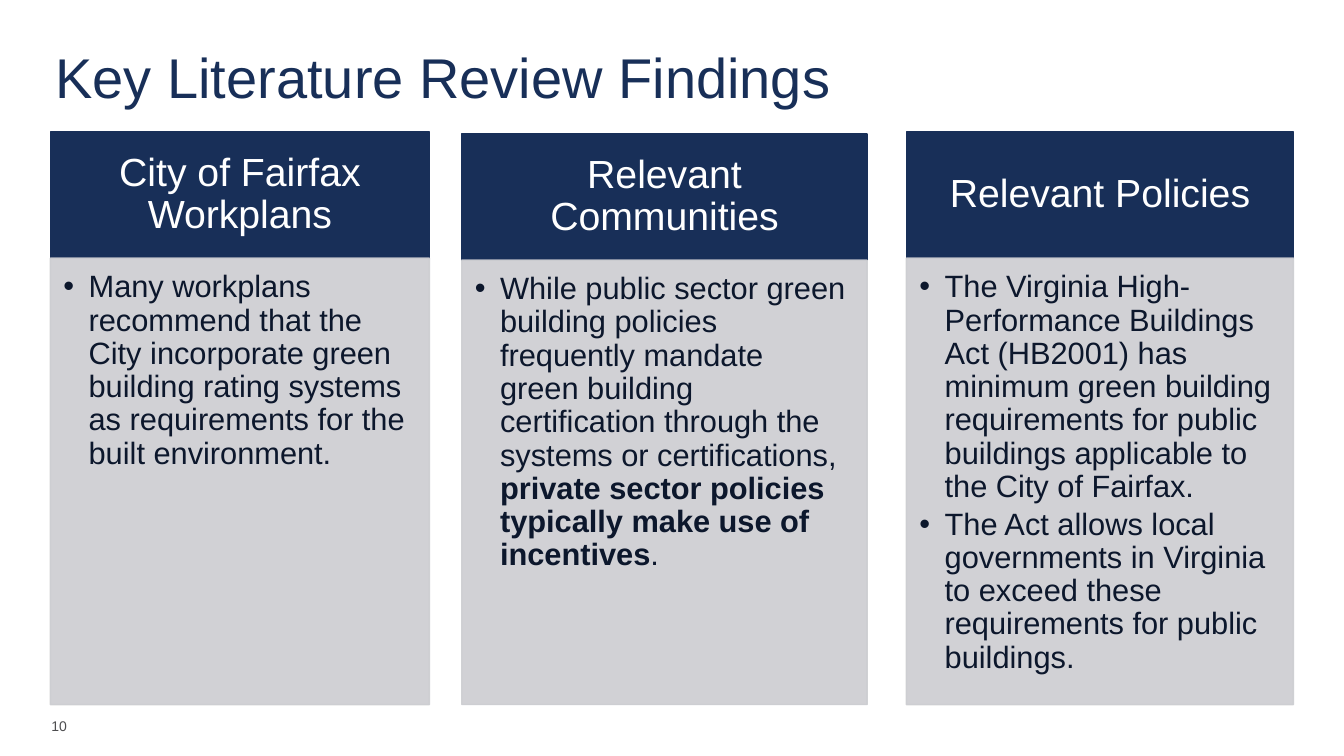
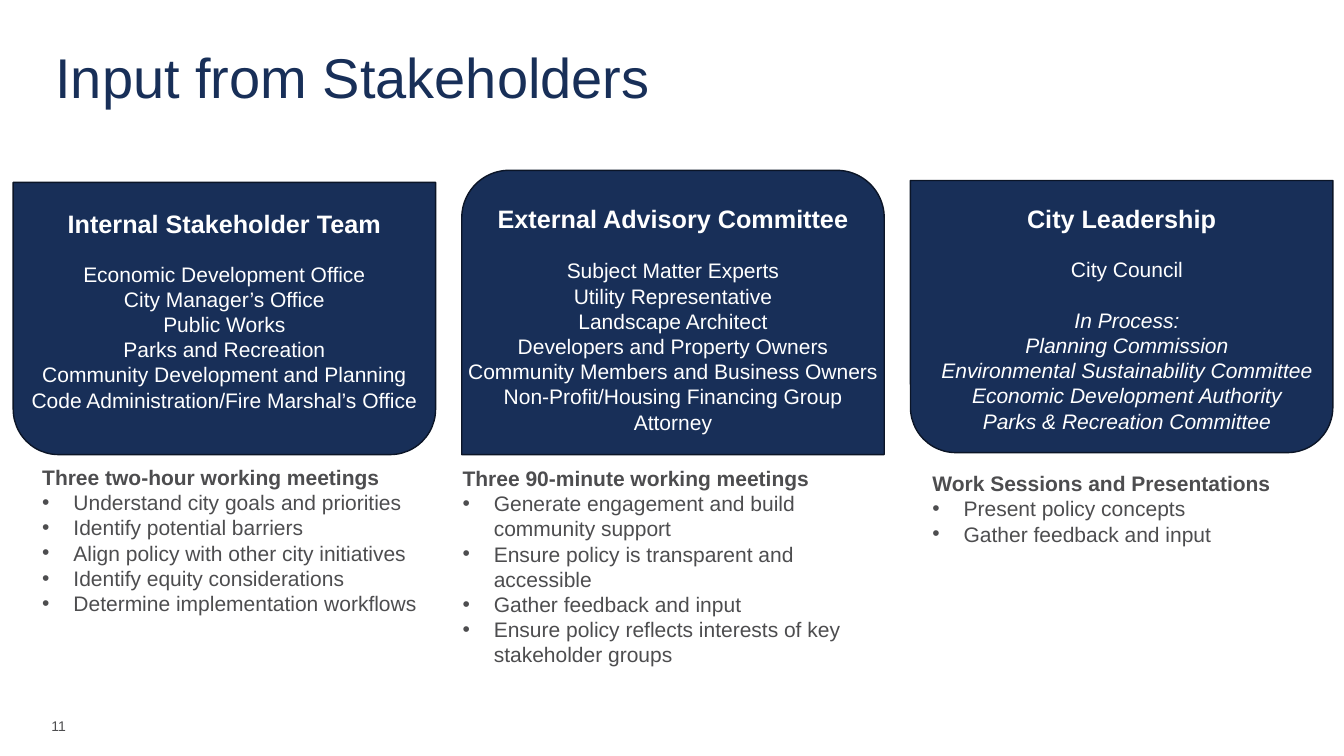
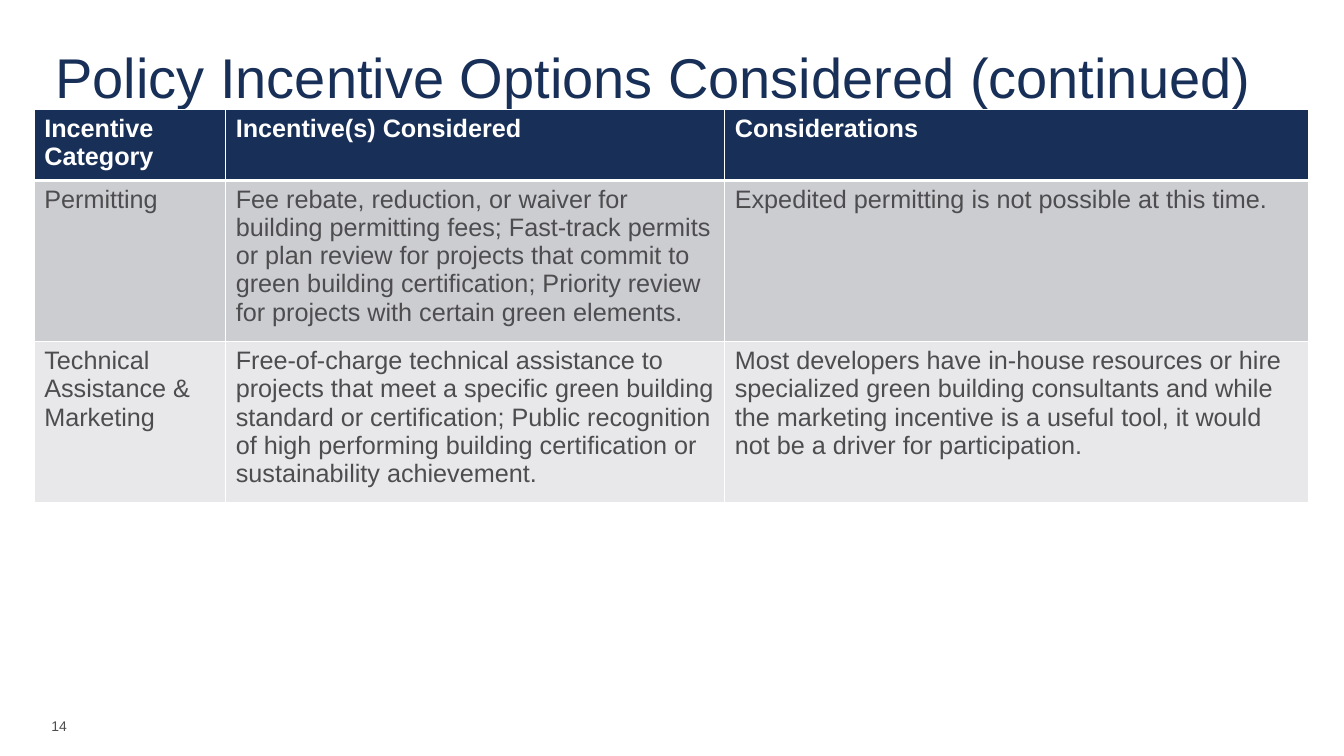
from dataclasses import dataclass
from typing import NamedTuple

from lxml.etree import SubElement
from pptx import Presentation
from pptx.dml.color import RGBColor
from pptx.enum.shapes import MSO_SHAPE as Shape
from pptx.enum.text import MSO_ANCHOR as Anchor, PP_ALIGN as Align
from pptx.oxml.ns import qn
from pptx.util import Emu, Inches, Pt

FONT = "Arial"
NAVY, OUTLINE, INK = "182F58", "0B1527", "0C172C"
GREY, SILVER, PALE, WHITE = "4D4D4F", "CCCDD1", "E8E8EA", "FFFFFF"
WIDTH, HEIGHT = Inches(13.33), Inches(7.5)


class Box(NamedTuple):
    """Left, top, width and height in percent of the slide."""
    left: float
    top: float
    width: float
    height: float


@dataclass
class Para:
    """Text in which ** switches bold on and off."""
    text: str
    italic: bool = False
    indent: float = 0
    before: float = 0


@dataclass
class Finding:
    left: float
    top: float
    width: float
    heading: str
    points: list[str]


@dataclass
class Group:
    """One stakeholder card and the notes under it."""
    top: float
    bottom: float
    heading: str
    heading_top: float
    members: list[Para]
    members_top: float
    meetings: str
    goals: list[str]
    notes: Box
    flipped: bool = True
    shift: float = 0


TITLE = Box(3.75, 4, 92.5, 10.53)
NUMBER = Box(3.08, 93.33, 30, 5.33)
HEADER_HEIGHT, BODY_BOTTOM = 16.67, 93.2
CARD_LEFT, CARD_PITCH, CARD_WIDTH = 0.98, 33.38, 31.43

FINDINGS = [
    Finding(3.75, 17.47, 28.2, "City of Fairfax Workplans", [
        "Many workplans recommend that the City incorporate green building rating "
        "systems as requirements for the built environment."]),
    Finding(34.36, 17.73, 30.16, "Relevant Communities", [
        "While public sector green building policies frequently mandate green building "
        "certification through the systems or certifications, **private sector policies "
        "typically make use of incentives**."]),
    Finding(67.44, 17.47, 28.8, "Relevant Policies", [
        "The Virginia High-Performance Buildings Act (HB2001) has minimum green building "
        "requirements for public buildings applicable to the City of Fairfax.",
        "The Act allows local governments in Virginia to exceed these requirements for "
        "public buildings."]),
]

GROUPS = [
    Group(24.13, 60.13, "Internal Stakeholder Team", 26.93, [
        Para("Economic Development Office"),
        Para("City Manager’s Office"),
        Para("Public Works"),
        Para("Parks and Recreation"),
        Para("Community Development and Planning"),
        Para("Code Administration/Fire Marshal’s Office")], 33.87,
        "Three two-hour working meetings", [
        "Understand city goals and priorities",
        "Identify potential barriers",
        "Align policy with other city initiatives",
        "Identify equity considerations",
        "Determine implementation workflows"], Box(2.4, 60.8, 30.53, 21.6)),
    Group(22.53, 60.13, "External Advisory Committee", 26.27, [
        Para("Subject Matter Experts"),
        Para("Utility Representative"),
        Para("Landscape Architect"),
        Para("Developers and Property Owners"),
        Para("Community Members and Business Owners"),
        Para("Non-Profit/Housing Financing Group"),
        Para("Attorney")], 33.47,
        "Three 90-minute working meetings", [
        "Generate engagement and build community support",
        "Ensure policy is transparent and accessible",
        "Gather feedback and input",
        "Ensure policy reflects interests of key stakeholder groups"],
        Box(33.68, 60.93, 30.53, 28.27), flipped=False),
    Group(23.87, 59.87, "City Leadership", 26.27, [
        Para("City Council"),
        Para("In Process:", italic=True, before=18),
        Para("Planning Commission", italic=True),
        Para("Environmental Sustainability Committee", italic=True),
        Para("Economic Development Authority", italic=True),
        Para("Parks & Recreation Committee", italic=True)], 33.33,
        "Work Sessions and Presentations", [
        "Present policy concepts",
        "Gather feedback and input"], Box(68.64, 61.6, 30.53, 11.47), shift=0.4),
]

COLUMNS = [14.25, 37.13, 43.44]
ROW_HEIGHT = 6.8
OPTIONS = [
    ["Incentive Category", "Incentive(s) Considered", "Considerations"],
    ["Permitting",
     "Fee rebate, reduction, or waiver for building permitting fees; Fast-track permits or "
     "plan review for projects that commit to green building certification; Priority review "
     "for projects with certain green elements.",
     "Expedited permitting is not possible at this time."],
    ["Technical Assistance & Marketing",
     "Free-of-charge technical assistance to projects that meet a specific green building "
     "standard or certification; Public recognition of high performing building "
     "certification or sustainability achievement.",
     "Most developers have in-house resources or hire specialized green building consultants "
     "and while the marketing incentive is a useful tool, it would not be a driver for "
     "participation."],
]


def rgb(color: str) -> RGBColor:
    return RGBColor.from_string(color)


def across(share: float) -> Emu:
    return Emu(round(WIDTH * share / 100))


def down(share: float) -> Emu:
    return Emu(round(HEIGHT * share / 100))


def place(box: Box) -> tuple[Emu, Emu, Emu, Emu]:
    return across(box.left), down(box.top), across(box.width), down(box.height)


def add_bullet(p, indent: float) -> None:
    pPr = p._p.get_or_add_pPr()
    pPr.set("marL", str(Inches(indent)))
    pPr.set("indent", str(-Inches(indent)))
    SubElement(pPr, qn("a:buFont")).set("typeface", FONT)
    SubElement(pPr, qn("a:buChar")).set("char", "•")


def write(tf, paras: list[Para], *, size: float, color: str, align=Align.LEFT,
          anchor=Anchor.TOP, insets=(0.1, 0.05, 0.1, 0.05), spacing=None, after=None) -> None:
    """Fill a text frame; insets are left, top, right and bottom in inches."""
    tf.word_wrap = True
    tf.vertical_anchor = anchor
    tf.margin_left, tf.margin_top, tf.margin_right, tf.margin_bottom = map(Inches, insets)
    for i, para in enumerate(paras):
        p = tf.add_paragraph() if i else tf.paragraphs[0]
        if para.indent:
            add_bullet(p, para.indent)
        p.alignment = align
        if spacing:
            p.line_spacing = spacing
        if after:
            p.space_after = Pt(after)
        if para.before:
            p.space_before = Pt(para.before)
        for part, text in enumerate(para.text.split("**")):
            if text:
                r = p.add_run()
                r.text = text
                r.font.name, r.font.size = FONT, Pt(size)
                r.font.bold, r.font.italic = part % 2 == 1, para.italic
                r.font.color.rgb = rgb(color)


def add_text(s, box: Box, paras: list[Para], **style) -> None:
    write(s.shapes.add_textbox(*place(box)).text_frame, paras, **style)


def add_panel(s, kind, box: Box, fill: str, line: str, opacity: int = 100):
    sp = s.shapes.add_shape(kind, *place(box))
    sp.shadow.inherit = False
    sp.fill.solid()
    sp.fill.fore_color.rgb = rgb(fill)
    sp.line.color.rgb = rgb(line)
    sp.line.width = Pt(1)
    if opacity < 100:
        for clr in sp.element.spPr.iter(qn("a:srgbClr")):
            SubElement(clr, qn("a:alpha")).set("val", str(opacity * 1000))
    return sp


def add_slide(prs, title: str, number: int):
    s = prs.slides.add_slide(prs.slide_layouts[6])
    add_text(s, NUMBER, [Para(str(number))], size=10, color=GREY, anchor=Anchor.MIDDLE)
    add_text(s, TITLE, [Para(title)], size=40, color=NAVY, anchor=Anchor.BOTTOM,
             insets=(0.05, 0, 0.1, 0))
    return s


def add_finding(s, item: Finding) -> None:
    header = add_panel(s, Shape.RECTANGLE, Box(item.left, item.top, item.width, HEADER_HEIGHT),
                       NAVY, NAVY)
    write(header.text_frame, [Para(item.heading)], size=28, color=WHITE, align=Align.CENTER,
          anchor=Anchor.MIDDLE, insets=(0.18, 0.1, 0.18, 0.1), spacing=0.9)
    top = item.top + HEADER_HEIGHT
    body = add_panel(s, Shape.RECTANGLE, Box(item.left, top, item.width, BODY_BOTTOM - top),
                     SILVER, SILVER, opacity=90)
    write(body.text_frame, [Para(point, indent=0.25) for point in item.points], size=22,
          color=INK, insets=(0.13, 0.13, 0.18, 0.2), spacing=0.9, after=3.3)


def add_group(s, col: int, group: Group) -> None:
    left = CARD_LEFT + col * CARD_PITCH
    card = add_panel(s, Shape.ROUND_2_SAME_RECTANGLE,
                     Box(left, group.top, CARD_WIDTH, group.bottom - group.top), NAVY, OUTLINE)
    card.rotation = 180 if group.flipped else 0
    centred = dict(color=WHITE, align=Align.CENTER, insets=(0, 0.05, 0, 0.05))
    add_text(s, Box(left, group.heading_top, CARD_WIDTH, 5.33),
             [Para(f"**{group.heading}**")], size=18, **centred)
    add_text(s, Box(left + group.shift, group.members_top, CARD_WIDTH, 25),
             group.members, size=15, **centred)
    goals = [Para(goal, indent=0.31) for goal in group.goals]
    add_text(s, group.notes, [Para(f"**{group.meetings}**"), *goals], size=15, color=GREY)


def add_borders(cell, bottom: float) -> None:
    """White cell edges, 1 pt except for the given bottom width."""
    tcPr = cell._tc.get_or_add_tcPr()
    for i, (side, width) in enumerate({"L": 1, "R": 1, "T": 1, "B": bottom}.items()):
        ln = tcPr.makeelement(qn(f"a:ln{side}"), {"w": str(Pt(width))})
        SubElement(SubElement(ln, qn("a:solidFill")), qn("a:srgbClr")).set("val", WHITE)
        tcPr.insert(i, ln)


def add_options(s) -> None:
    box = Box(2.55, 14.53, sum(COLUMNS), ROW_HEIGHT * len(OPTIONS))
    table = s.shapes.add_table(len(OPTIONS), len(COLUMNS), *place(box)).table
    table.horz_banding = False
    for column, width in zip(table.columns, COLUMNS):
        column.width = across(width)
    for i, (texts, fill) in enumerate(zip(OPTIONS, (NAVY, SILVER, PALE))):
        for j, text in enumerate(texts):
            cell = table.cell(i, j)
            cell.fill.solid()
            cell.fill.fore_color.rgb = rgb(fill)
            add_borders(cell, 1 if i else 3)
            write(cell.text_frame, [Para(text if i else f"**{text}**")], size=18,
                  color=GREY if i else WHITE)


def main() -> None:
    prs = Presentation()
    prs.slide_width, prs.slide_height = WIDTH, HEIGHT

    s = add_slide(prs, "Key Literature Review Findings", 10)
    for item in FINDINGS:
        add_finding(s, item)

    s = add_slide(prs, "Input from Stakeholders", 11)
    for col, group in enumerate(GROUPS):
        add_group(s, col, group)

    s = add_slide(prs, "Policy Incentive Options Considered (continued)", 14)
    add_options(s)

    prs.save("out.pptx")


if __name__ == "__main__":
    main()
